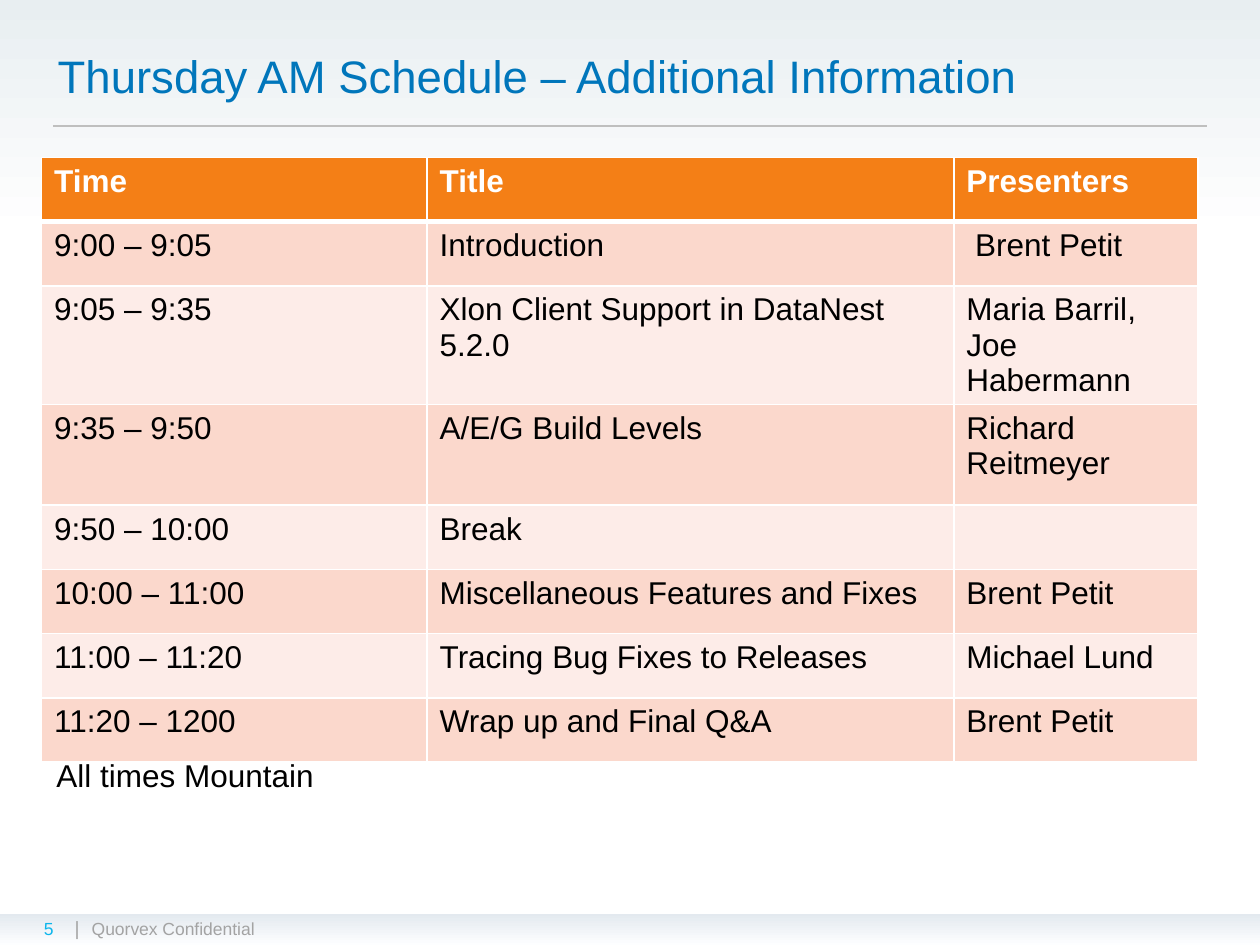
"""Build the Thursday morning schedule slide."""
from lxml.etree import SubElement
from pptx import Presentation
from pptx.dml.color import RGBColor
from pptx.enum.shapes import MSO_CONNECTOR, MSO_SHAPE
from pptx.enum.text import MSO_ANCHOR
from pptx.oxml.ns import qn
from pptx.util import Inches, Pt

BLACK = RGBColor(0x00, 0x00, 0x00)
WHITE = RGBColor(0xFF, 0xFF, 0xFF)
BLUE = RGBColor(0x00, 0x76, 0xBB)
CYAN = RGBColor(0x0D, 0xB6, 0xEC)
GRAY = RGBColor(0xA3, 0xA3, 0xA3)
RULE_GRAY = RGBColor(0xBF, 0xBF, 0xBF)
ORANGE = RGBColor(0xF4, 0x7F, 0x16)
BANDS = (RGBColor(0xFB, 0xD8, 0xCC), RGBColor(0xFD, 0xEC, 0xE8))
SKY = RGBColor(0xE8, 0xEE, 0xF1)
FOOTER_TOP = RGBColor(0xE3, 0xE9, 0xEF)
FOOTER_BOTTOM = RGBColor(0xFD, 0xFE, 0xFF)
FONT = "Arial"

SCHEDULE = [
    ("Time", "Title", "Presenters"),
    ("9:00 – 9:05", "Introduction", "Brent Petit"),
    ("9:05 – 9:35", "Xlon Client Support in DataNest 5.2.0", "Maria Barril, Joe Habermann"),
    ("9:35 – 9:50", "A/E/G Build Levels", "Richard Reitmeyer"),
    ("9:50 – 10:00", "Break", ""),
    ("10:00 – 11:00", "Miscellaneous Features and Fixes", "Brent Petit"),
    ("11:00 – 11:20", "Tracing Bug Fixes to Releases", "Michael Lund"),
    ("11:20 – 1200", "Wrap up and Final Q&A", "Brent Petit"),
]
COLUMN_WIDTHS = (3.06, 4.18, 1.94)
ROW_HEIGHT, TALL_ROW_HEIGHT = 0.51, 0.8
TALL_ROWS = (2, 3)
INDENTED_CELL = (1, 2)

BACKDROPS = [
    (0, 7.5, SKY, WHITE, 0.25),
    (7.25, 0.25, FOOTER_TOP, FOOTER_BOTTOM, 1),
]
TEXTS = [
    ("Quorvex Confidential", (0.63, 7.24, 5, 0.47), 10, GRAY, MSO_ANCHOR.TOP, True),
    ("|", (0.5, 7.22, 0.19, 0.27), 11, GRAY, MSO_ANCHOR.TOP, False),
    ("Thursday AM Schedule – Additional Information", (0.36, 0.25, 8.5, 0.7), 26, BLUE,
     MSO_ANCHOR.MIDDLE, True),
    ("5", (0.25, 7.24, 0.51, 0.27), 10, CYAN, MSO_ANCHOR.TOP, True),
    ("All times Mountain", (0.35, 5.95, 2.26, 0.4), 18, BLACK, MSO_ANCHOR.TOP, False),
]


def format_runs(text_frame, size, color, bold=False):
    for paragraph in text_frame.paragraphs:
        for run in paragraph.runs:
            run.font.name = FONT
            run.font.size = Pt(size)
            run.font.bold = bold
            run.font.color.rgb = color


def add_backdrop(slide, top, height, start, end, end_position):
    shape = slide.shapes.add_shape(
        MSO_SHAPE.RECTANGLE, 0, Inches(top), Inches(10), Inches(height))
    shape.shadow.inherit = False
    shape.line.fill.background()
    shape.fill.gradient()
    shape.fill.gradient_angle = 270
    first, last = shape.fill.gradient_stops
    first.color.rgb, first.position = start, 0
    last.color.rgb, last.position = end, end_position


def add_text(slide, text, box, size, color, anchor, wrap):
    text_frame = slide.shapes.add_textbox(*map(Inches, box)).text_frame
    text_frame.word_wrap = wrap
    text_frame.vertical_anchor = anchor
    text_frame.text = text
    format_runs(text_frame, size, color)


def add_rule(slide):
    line = slide.shapes.add_connector(
        MSO_CONNECTOR.STRAIGHT, Inches(0.42), Inches(1), Inches(9.58), Inches(1))
    line.line.color.rgb = RULE_GRAY
    line.line.width = Pt(0.75)
    SubElement(line._element.spPr, qn("a:effectLst"))


def set_borders(cell, bottom_width, top_width):
    properties = cell._tc.get_or_add_tcPr()
    for side, width in (("L", 1), ("R", 1), ("T", top_width), ("B", bottom_width)):
        border = SubElement(properties, qn(f"a:ln{side}"), w=str(Pt(width)))
        fill = SubElement(border, qn("a:solidFill"))
        SubElement(fill, qn("a:srgbClr"), val=str(WHITE))


def add_schedule(slide):
    heights = [TALL_ROW_HEIGHT if index in TALL_ROWS else ROW_HEIGHT
               for index in range(len(SCHEDULE))]
    table = slide.shapes.add_table(
        len(SCHEDULE), len(COLUMN_WIDTHS), Inches(0.33), Inches(1.25),
        Inches(sum(COLUMN_WIDTHS)), Inches(sum(heights))).table
    for column, width in zip(table.columns, COLUMN_WIDTHS):
        column.width = Inches(width)
    for row_index, values in enumerate(SCHEDULE):
        table.rows[row_index].height = Inches(heights[row_index])
        header = row_index == 0
        for column_index, value in enumerate(values):
            cell = table.cell(row_index, column_index)
            set_borders(cell, 3 if header else 1, 3 if row_index == 1 else 1)
            cell.fill.solid()
            cell.fill.fore_color.rgb = ORANGE if header else BANDS[(row_index - 1) % 2]
            if (row_index, column_index) == INDENTED_CELL:
                cell.margin_left = Inches(0.17)
            if value:
                cell.text_frame.text = value
                format_runs(cell.text_frame, 18, WHITE if header else BLACK, header)


def main():
    presentation = Presentation()
    presentation.slide_width, presentation.slide_height = Inches(10), Inches(7.5)
    slide = presentation.slides.add_slide(presentation.slide_layouts[6])
    for backdrop in BACKDROPS:
        add_backdrop(slide, *backdrop)
    add_rule(slide)
    add_schedule(slide)
    for text in TEXTS:
        add_text(slide, *text)
    presentation.save("out.pptx")


if __name__ == "__main__":
    main()
